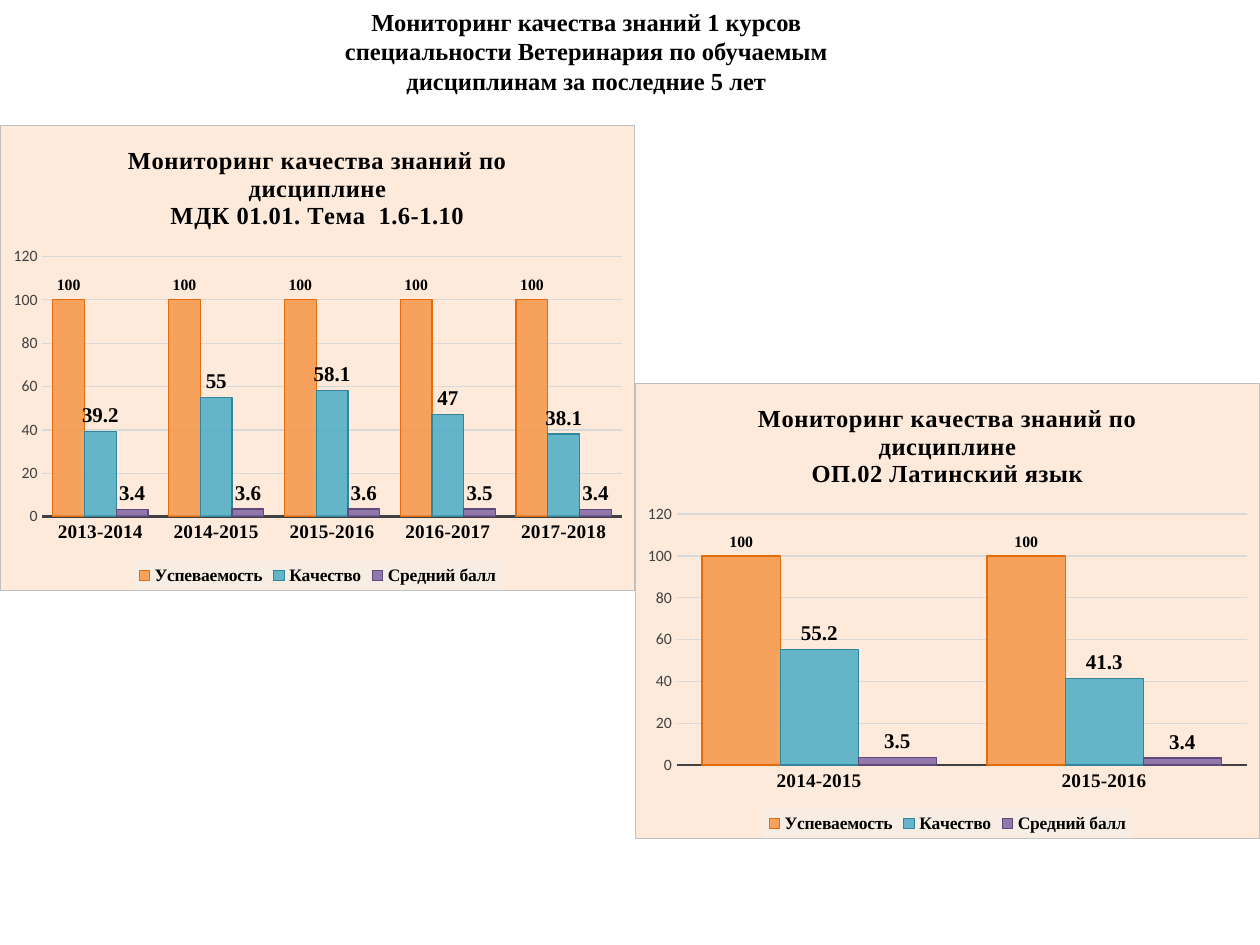
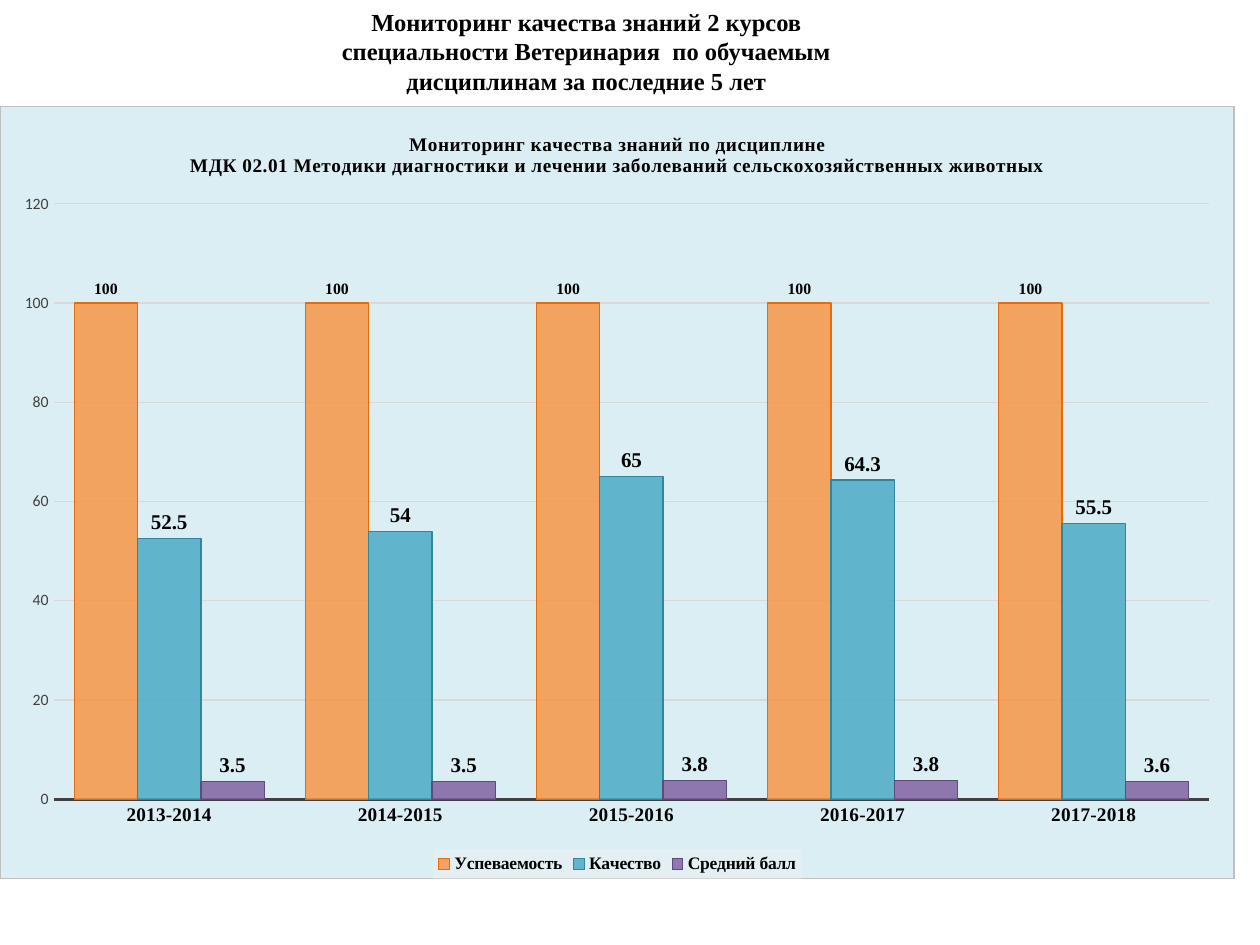
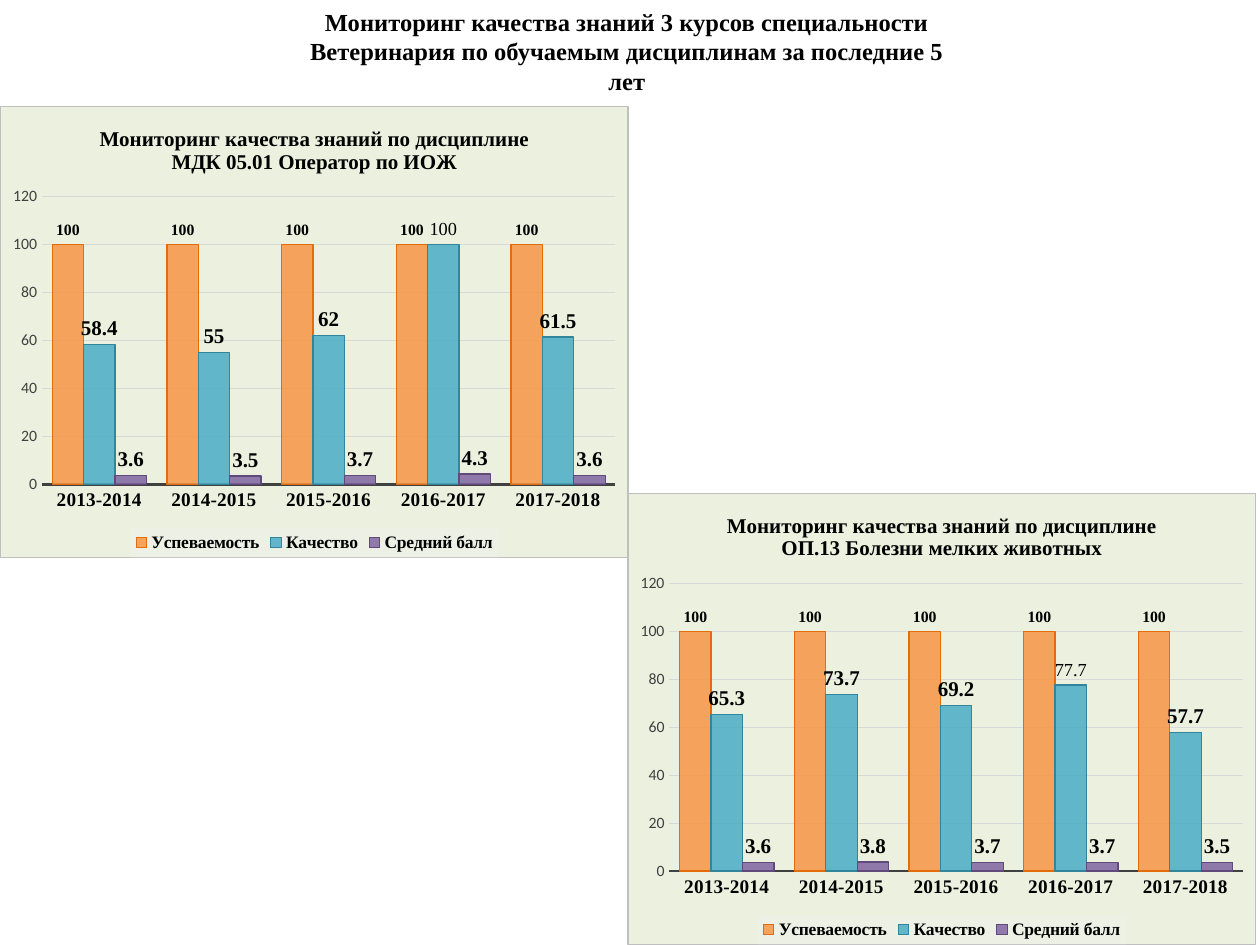
"""Builds three slides of charts on knowledge quality by year of study."""
from dataclasses import dataclass

from lxml import etree
from pptx import Presentation
from pptx.chart.data import CategoryChartData as Data
from pptx.dml.color import RGBColor as RGB
from pptx.enum.chart import XL_CHART_TYPE as Kind
from pptx.enum.chart import XL_LABEL_POSITION as Spot
from pptx.enum.chart import XL_LEGEND_POSITION as Side
from pptx.enum.chart import XL_TICK_MARK as Tick
from pptx.enum.text import MSO_ANCHOR as Anchor
from pptx.enum.text import MSO_AUTO_SIZE as Fit
from pptx.enum.text import PP_ALIGN as Align
from pptx.oxml import parse_xml
from pptx.oxml.ns import nsdecls, qn
from pptx.util import Inches, Pt


@dataclass(frozen=True)
class Theme:
    serif: str = "Times New Roman"
    sans: str = "Calibri"
    ink: str = "000000"
    dark: str = "404040"
    grid: str = "D9D9D9"
    edge: str = "BFBFBF"
    pale: str = "F2F2F2"
    peach: str = "FDEADA"
    sky: str = "DBEEF4"
    lime: str = "EBF1DE"
    head: float = 14
    years: float = 11
    key: float = 10
    tick: float = 9
    odd: float = 10.5


def style(font, size, bold=True, face=Theme.serif, color=Theme.ink):
    font.name, font.size, font.bold = face, Pt(size), bold
    font.color.rgb = RGB.from_string(color)


def panel(fill, alpha, edge):
    line = f'<a:solidFill><a:srgbClr val="{edge}"/></a:solidFill>' if edge else "<a:noFill/>"
    return parse_xml(
        f'<c:spPr {nsdecls("c", "a")}><a:solidFill><a:srgbClr val="{fill}">'
        f'<a:alpha val="{alpha}000"/></a:srgbClr></a:solidFill>'
        f'<a:ln w="9525">{line}</a:ln></c:spPr>')


theme = Theme()
years = ["2013-2014", "2014-2015", "2015-2016", "2016-2017", "2017-2018"]
bars = [("Успеваемость", "F79646", "E46C0A", 9),
        ("Качество", "4BACC6", "31859C", 12),
        ("Средний балл", "8064A2", "604A7B", 12)]
lead = "Мониторинг качества знаний по дисциплине\n"

slides = [
    ("Мониторинг качества знаний 1 курсов специальности Ветеринария по обучаемым "
     "дисциплинам за последние 5 лет", 47.7, theme.peach, 14, 4, 20, [
         ("МДК 01.01. Тема  1.6-1.10", (0, 13.2, 50.4, 49.33), years,
          [39.2, 55, 58.1, 47, 38.1], [3.4, 3.6, 3.6, 3.5, 3.4], None),
         ("ОП.02 Латинский язык", (50.4, 40.53, 49.6, 48.27), years[1:3],
          [55.2, 41.3], [3.5, 3.4], None)]),
    ("Мониторинг качества знаний 2 курсов специальности Ветеринария  по обучаемым "
     "дисциплинам за последние 5 лет", 47.7, theme.sky, 11, 3, 20, [
         ("МДК 02.01 Методики диагностики и лечении заболеваний сельскохозяйственных животных",
          (0, 11.2, 98, 81.87), years,
          [52.5, 54, 65, 64.3, 55.5], [3.5, 3.5, 3.8, 3.8, 3.6], None)]),
    ("Мониторинг качества знаний 3 курсов специальности Ветеринария по обучаемым "
     "дисциплинам за последние 5 лет", 54.1, theme.lime, 12, 3, 0, [
         ("МДК 05.01 Оператор по ИОЖ", (0, 11.2, 49.9, 47.87), years,
          [58.4, 55, 62, 100, 61.5], [3.6, 3.5, 3.7, 4.3, 3.6], 3),
         ("ОП.13 Болезни мелких животных", (49.8, 52.13, 49.9, 47.87), years,
          [65.3, 73.7, 69.2, 77.7, 57.7], [3.6, 3.8, 3.7, 3.7, 3.5], 3)]),
]

deck = Presentation()
deck.slide_width, deck.slide_height = Inches(10), Inches(7.5)
col, row = deck.slide_width / 100, deck.slide_height / 100

for text, span, fill, size, lines, space, charts in slides:
    slide = deck.slides.add_slide(deck.slide_layouts[5])
    title = slide.shapes.title
    title.left, title.top = int(22.7 * col), 0
    title.width, title.height = int(span * col), int(10.8 * row)
    frame = title.text_frame
    frame.text = text
    frame.word_wrap, frame.auto_size = True, Fit.SHAPE_TO_FIT_TEXT
    frame.vertical_anchor = Anchor.MIDDLE
    frame.paragraphs[0].alignment = Align.CENTER
    style(frame.paragraphs[0].runs[0].font, theme.head)

    for name, (left, top, wide, high), cats, marks, means, odd in charts:
        data = Data()
        data.categories = cats
        for bar, vals in zip(bars, ([100] * len(cats), marks, means)):
            data.add_series(bar[0], vals)
        chart = slide.shapes.add_chart(
            Kind.COLUMN_CLUSTERED, int(left * col), int(top * row),
            int(wide * col), int(high * row), data).chart
        style(chart.font, theme.key, False, theme.sans)
        root = chart._chartSpace.find(qn("c:chart"))
        root.addnext(panel(fill, 100, theme.edge))

        chart.has_title = True
        words = chart.chart_title.text_frame
        words.text = lead + name
        for para in words.paragraphs:
            for run in para.runs:
                style(run.font, size)
                run.font._element.set("spc", str(space))

        chart.has_legend = True
        legend = chart.legend
        legend.position, legend.include_in_layout = Side.BOTTOM, False
        style(legend.font, theme.key)
        legend._element.find(qn("c:txPr")).addprevious(panel(theme.pale, 39, None))

        axis = chart.category_axis
        axis.major_tick_mark = axis.minor_tick_mark = Tick.NONE
        style(axis.tick_labels.font, theme.years)
        axis.format.line.width = Pt(1.5)
        axis.format.line.color.rgb = RGB.from_string(theme.dark)
        scale = chart.value_axis
        scale.minimum_scale, scale.maximum_scale, scale.major_unit = 0, 120, 20
        scale.major_tick_mark = scale.minor_tick_mark = Tick.NONE
        style(scale.tick_labels.font, theme.tick, False, theme.sans, theme.dark)
        scale.format.line.fill.background()
        grid = scale.major_gridlines.format.line
        grid.width, grid.color.rgb = Pt(0.75), RGB.from_string(theme.grid)

        plot = chart.plots[0]
        plot.gap_width, plot.overlap, plot.vary_by_categories = 65, 0, False
        for part, (_, tint, edge, point) in zip(plot.series, bars):
            part.format.fill.solid()
            part.format.fill.fore_color.rgb = RGB.from_string(tint)
            shade = part._element.find(qn("c:spPr")).find(".//" + qn("a:srgbClr"))
            etree.SubElement(shade, qn("a:alpha")).set("val", "85000")
            part.format.line.width = Pt(0.75)
            part.format.line.color.rgb = RGB.from_string(edge)
            tags = part.data_labels
            tags.show_value, tags.position = True, Spot.OUTSIDE_END
            style(tags.font, point)
        if odd is not None:
            tag = plot.series[1].points[odd].data_label
            style(tag.font, theme.odd, False)
            tag.position = Spot.OUTSIDE_END

        inch_w, inch_h = wide / 10, high * 0.075
        x = 0.02 + 0.23 / inch_w
        y = 0.04 + size * lines * 0.016 / inch_h
        w, h = 0.98 - x, 0.98 - 0.51 / inch_h - y
        area = root.find(qn("c:plotArea"))
        for old in area.findall(qn("c:layout")):
            area.remove(old)
        sides = "".join(f'<c:{k} val="{v:.3f}"/>' for k, v in zip("xywh", (x, y, w, h)))
        area.insert(0, parse_xml(
            f'<c:layout {nsdecls("c")}><c:manualLayout><c:layoutTarget val="inner"/>'
            f'<c:xMode val="edge"/><c:yMode val="edge"/>{sides}</c:manualLayout></c:layout>'))

deck.save("out.pptx")
